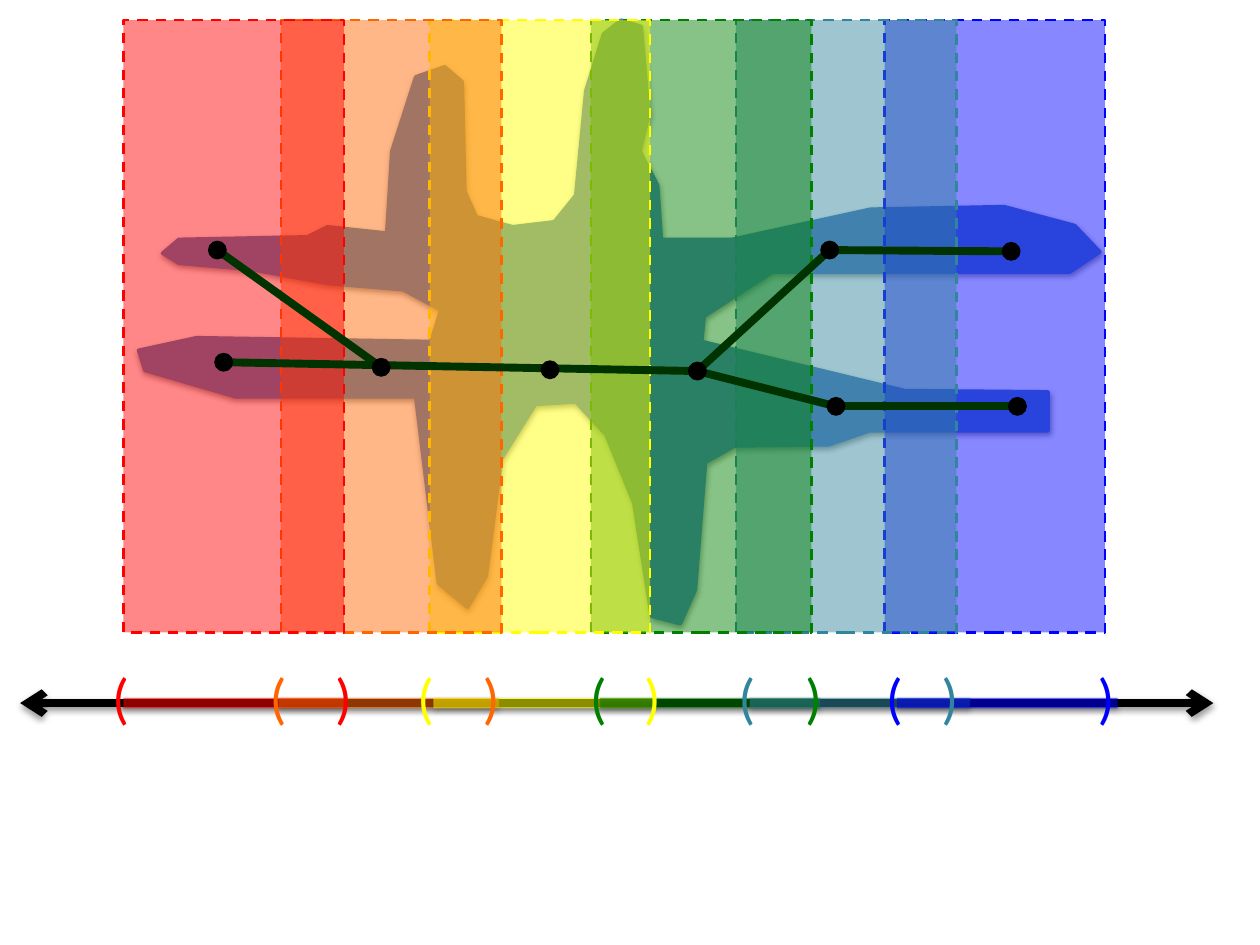
from lxml.etree import SubElement
from pptx import Presentation
from pptx.dml.color import RGBColor
from pptx.enum.dml import MSO_LINE
from pptx.enum.shapes import MSO_CONNECTOR, MSO_SHAPE
from pptx.oxml.ns import qn
from pptx.util import Emu, Inches, Pt

# colour, band left, axis segment left, opening and closing bracket centres
INTERVALS = [
    ("FF0000", 0.98, 0.98, 0.96, 2.73),
    ("FF6600", 2.23, 2.21, 2.21, 3.90),
    ("FFFF00", 3.41, 3.44, 3.38, 5.18),
    ("008000", 4.69, 4.76, 4.75, 6.46),
    ("31859C", 5.84, 5.95, 5.93, 7.54),
    ("0000FF", 7.02, 7.12, 7.10, 8.78),
]
SPAN = 1.75

BODY = [
    (1.29, 2.01), (1.42, 1.9), (2.44, 1.88), (2.6, 1.8), (3.07, 1.85), (3.11, 1.2),
    (3.3, 0.61), (3.53, 0.53), (3.67, 0.65), (3.69, 1.52), (3.78, 1.72), (4.07, 1.8),
    (4.4, 1.76), (4.57, 1.55), (4.65, 0.72), (4.79, 0.27), (4.93, 0.16), (5.09, 0.21),
    (5.15, 0.91), (5.08, 1.2), (5.22, 1.47), (5.25, 1.9), (5.81, 1.9), (6.91, 1.66),
    (7.97, 1.64), (8.53, 1.79), (8.73, 2), (8.49, 2.16), (6.13, 2.16), (5.59, 2.51),
    (5.57, 2.71), (7.18, 3.1), (8.32, 3.11), (8.32, 3.42), (6.9, 3.42), (6.58, 3.53),
    (5.83, 3.54), (5.6, 3.67), (5.52, 4.68), (5.4, 4.95), (5.17, 4.89), (5.03, 3.99),
    (4.81, 3.45), (4.57, 3.19), (4.25, 3.21), (3.98, 3.64), (3.86, 4.57), (3.71, 4.82),
    (3.48, 4.63), (3.3, 3.15), (1.87, 3.15), (1.15, 2.94), (1.1, 2.78), (1.56, 2.68),
    (3.42, 2.71), (3.5, 2.46), (3.2, 2.3), (2.6, 2.25), (2, 2.14), (1.42, 2.09),
]

NODE_SIZE = 0.15
NODES = {
    "upper left": (1.65, 1.91), "lower left": (1.7, 2.8), "left fork": (2.95, 2.84),
    "middle": (4.29, 2.86), "right fork": (5.46, 2.87),
    "upper bend": (6.51, 1.91), "lower bend": (6.56, 3.15),
    "upper right": (7.95, 1.92), "lower right": (8, 3.15),
}
EDGES = [
    ("upper left", "left fork"), ("lower left", "right fork"),
    ("right fork", "lower bend"), ("right fork", "upper bend"),
    ("upper bend", "upper right"), ("lower bend", "lower right"),
]


def rgb(color):
    return RGBColor.from_string(color)


def set_alpha(part, percent):
    """Make the solid colour found inside an XML part see-through."""
    SubElement(part.find(".//" + qn("a:srgbClr")), qn("a:alpha"), val=str(percent * 1000))


def set_effects(s, shadow):
    """Replace the theme effect by a soft shadow below, or by none."""
    effects = SubElement(s._element.spPr, qn("a:effectLst"))
    if shadow:
        outer = SubElement(effects, qn("a:outerShdw"), blurRad=str(Pt(3.1)),
                           dist=str(Pt(1.6)), dir="5400000", rotWithShape="0")
        SubElement(outer, qn("a:srgbClr"), val="000000")
        set_alpha(outer, 38)


def style_line(s, color, width, dash=None):
    s.line.color.rgb = rgb(color)
    for name, value in {"width": Pt(width), "dash_style": dash}.items():
        setattr(s.line, name, value)


def fill_shape(s, color):
    s.fill.solid()
    s.fill.fore_color.rgb = rgb(color)


def add_line(shapes, start, end, color, width, shadow=False):
    s = shapes.add_connector(MSO_CONNECTOR.STRAIGHT, *map(Inches, start + end))
    style_line(s, color, width)
    set_effects(s, shadow)
    return s


def add_body(shapes, left, top):
    points = [(Inches(left + x), Inches(top + y)) for x, y in BODY]
    builder = shapes.build_freeform(*points[0], scale=1.0)
    builder.add_line_segments(points[1:], close=True)
    s = builder.convert_to_shape(Emu(0), Emu(0))
    fill_shape(s, "4F81BD")
    style_line(s, "4F81BD", 2)
    set_effects(s, True)


def add_bands(shapes, left, top, height):
    group = shapes.add_group_shape()
    for color, x, *_ in reversed(INTERVALS):
        s = group.shapes.add_shape(MSO_SHAPE.RECTANGLE, Inches(left + x), Inches(top),
                                   Inches(SPAN), Inches(height))
        fill_shape(s, color)
        set_alpha(s._element.spPr.find(qn("a:solidFill")), 47)
        style_line(s, color, 1.5, MSO_LINE.DASH)
        set_effects(s, False)


def add_axis(shapes, left, top):
    """Draw the number line, its coloured segments and their brackets."""
    y = top + 0.37
    axis = add_line(shapes, (left + 0.16, y), (left + 9.63, y), "000000", 4.5, True)
    for end in ("a:headEnd", "a:tailEnd"):
        SubElement(axis._element.spPr.find(qn("a:ln")), qn(end), type="arrow")
    for color, _, x, *_ in INTERVALS:
        s = add_line(shapes, (left + x, y), (left + x + SPAN, y), color, 6, True)
        set_alpha(s._element.spPr.find(qn("a:ln")), 55)
    add_brackets(shapes, left + 0.7, top, left)


def add_brackets(shapes, box_left, top, axis_left):
    """Write all brackets in one paragraph, each centred on a tab stop."""
    tf = shapes.add_textbox(Inches(box_left), Inches(top), Inches(9), Inches(0.64)).text_frame
    tf.word_wrap = True
    p = tf.paragraphs[0]
    tabs = SubElement(p._p.get_or_add_pPr(), qn("a:tabLst"))
    brackets = [(x, sign, color) for color, _, _, start, end in INTERVALS
                for x, sign in ((start, "("), (end, ")"))]
    for x, sign, color in sorted(brackets):
        stop = Inches(axis_left + x - box_left) - tf.margin_left
        SubElement(tabs, qn("a:tab"), pos=str(stop), algn="ctr")
        r = p.add_run()
        r.text = "\t" + sign
        r.font.color.rgb = rgb(color)
        for name, value in {"size": Pt(32), "name": "Calibri"}.items():
            setattr(r.font, name, value)


def add_graph(shapes, left, top):
    """Join the node centres by edges, then draw the nodes on top."""
    half = NODE_SIZE / 2
    for ends in EDGES:
        start, end = [(left + x + half, top + y + half) for x, y in map(NODES.get, ends)]
        add_line(shapes, start, end, "003300", 4.5)
    group = shapes.add_group_shape()
    for x, y in NODES.values():
        s = group.shapes.add_shape(MSO_SHAPE.OVAL, Inches(left + x), Inches(top + y),
                                   Inches(NODE_SIZE), Inches(NODE_SIZE))
        fill_shape(s, "000000")
        s.line.fill.background()
        set_effects(s, False)


def main():
    prs = Presentation()
    prs.slide_width, prs.slide_height = Inches(10), Inches(7.5)
    shapes = prs.slides.add_slide(prs.slide_layouts[6]).shapes
    add_body(shapes, 0, 0)
    add_bands(shapes, 0, 0.16, 4.86)
    add_axis(shapes, 0, 5.21)
    add_graph(shapes, 0, 0)
    prs.save("out.pptx")


if __name__ == "__main__":
    main()
